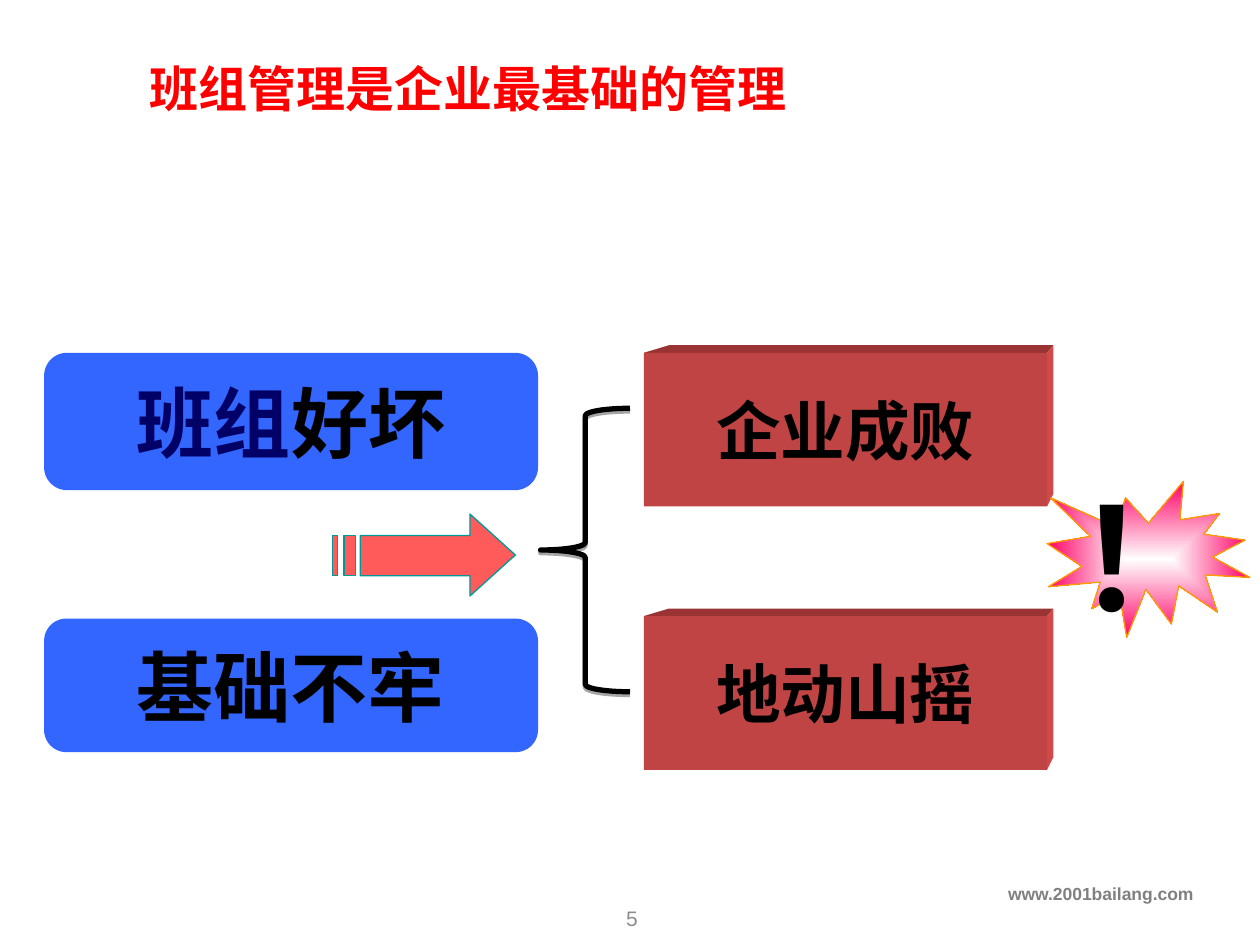
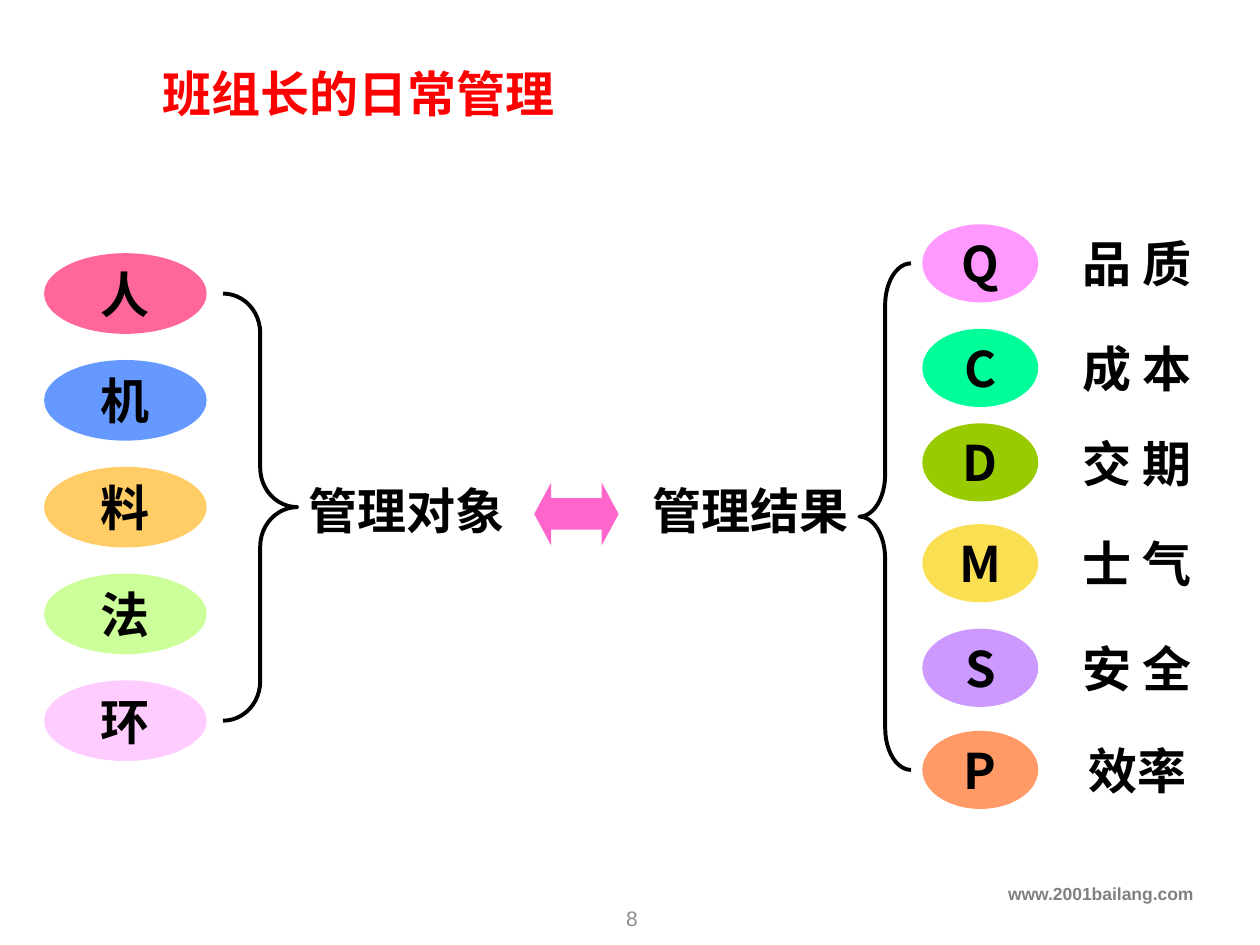
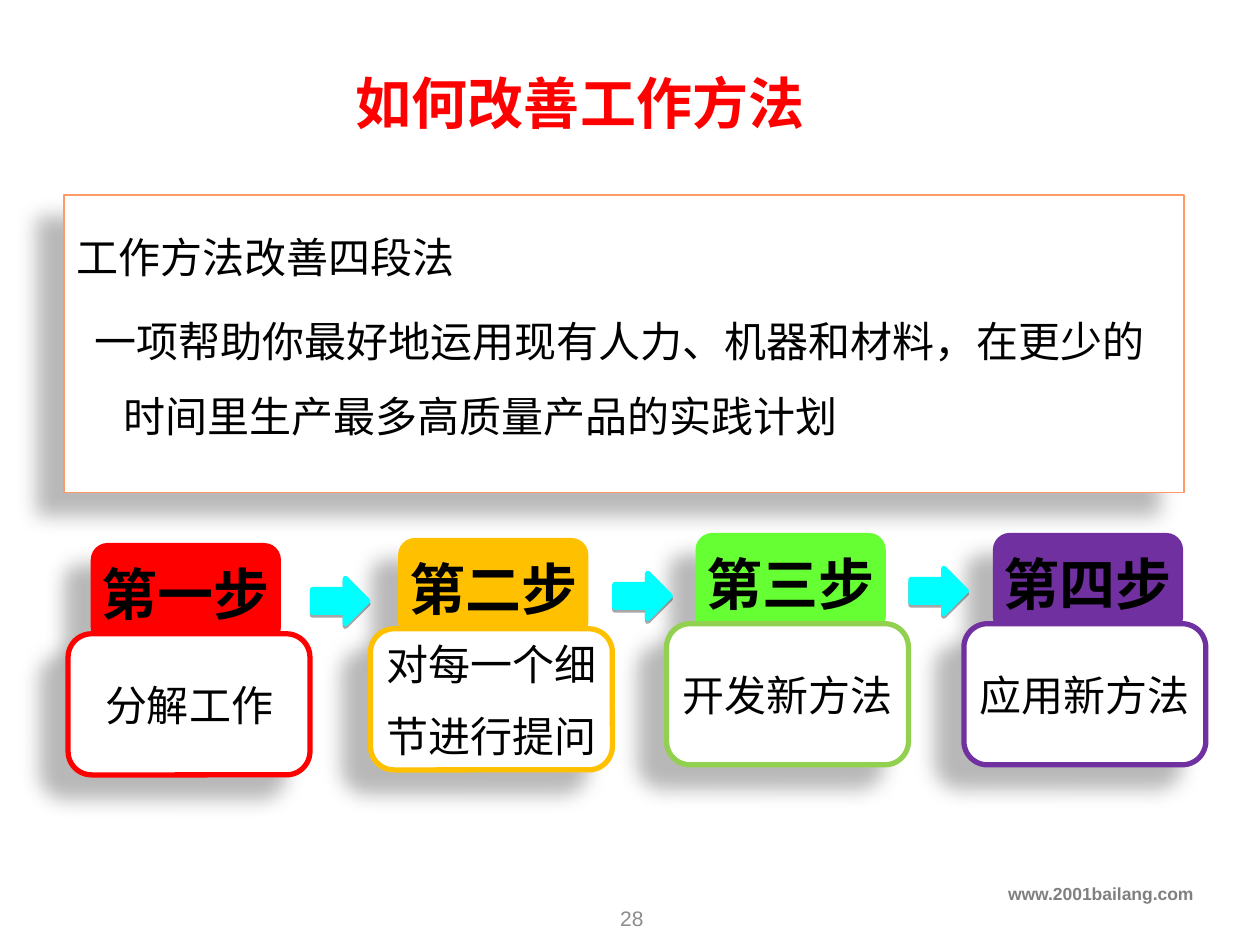
from lxml import etree
from pptx import Presentation
from pptx import util as u
from pptx.dml import color
from pptx.enum import shapes, text
from pptx.oxml import ns

CJK = "Noto Sans CJK SC"
LATIN = "Arial"
RED, BLACK, WHITE = "FF0000", "000000", "FFFFFF"
BLUE, CORAL, CYAN = "3366FF", "FF5B5B", "00FFFF"
SITE = "www.2001bailang.com"
SOFT_SHADOW = dict(alpha=28, blur=11.8, distance=19.7, angle=141)
HARD_SHADOW = dict(alpha=34, blur=0, distance=1.6, angle=90)
LEFT, CENTER, RIGHT = text.PP_ALIGN.LEFT, text.PP_ALIGN.CENTER, text.PP_ALIGN.RIGHT
MIDDLE, TOP = text.MSO_ANCHOR.MIDDLE, text.MSO_ANCHOR.TOP
PRESET = shapes.MSO_SHAPE


def rgb(value):
    return color.RGBColor.from_string(value)


def inches(*values):
    return [u.Inches(value) for value in values]


def add_element(parent, tag, **attributes):
    element = etree.SubElement(parent, ns.qn(tag))
    for name, value in attributes.items():
        element.set(name, str(value))
    return element


def write(shape, paragraphs, size=28, font=CJK, colour=BLACK, bold=True, align=CENTER,
          anchor=MIDDLE, wrap=False, insets=(0.1, 0.05), before=0, spacing=None, indents=()):
    frame = shape.text_frame
    frame.word_wrap = wrap
    frame.auto_size = text.MSO_AUTO_SIZE.NONE
    frame.vertical_anchor = anchor
    frame.margin_left = frame.margin_right = u.Inches(insets[0])
    frame.margin_top = frame.margin_bottom = u.Inches(insets[1])
    if isinstance(paragraphs, str):
        paragraphs = [paragraphs]
    for index, content in enumerate(paragraphs):
        paragraph = frame.add_paragraph() if index else frame.paragraphs[0]
        paragraph.alignment = align
        paragraph.space_before = u.Pt(before if index else 0)
        if spacing:
            paragraph.line_spacing = u.Pt(spacing)
        if indents:
            margin, indent = indents[index]
            properties = paragraph._p.get_or_add_pPr()
            properties.set("marL", str(u.Inches(margin)))
            properties.set("indent", str(u.Inches(indent)))
        pieces = [(content, colour)] if isinstance(content, str) else content
        for words, run_colour in pieces:
            run = paragraph.add_run()
            run.text = words
            run.font.size = u.Pt(size)
            run.font.bold = bold
            run.font.color.rgb = rgb(run_colour)
            run.font.name = font
            add_element(run._r.get_or_add_rPr(), "a:ea", typeface=font)


def paint(shape, fill=None, line=None, width=1, shadow=None):
    if fill:
        shape.fill.solid()
        shape.fill.fore_color.rgb = rgb(fill)
    else:
        shape.fill.background()
    if line:
        shape.line.color.rgb = rgb(line)
        shape.line.width = u.Pt(width)
    else:
        shape.line.fill.background()
    shape.shadow.inherit = False
    if shadow:
        effects = shape._element.spPr.find(ns.qn("a:effectLst"))
        outer = add_element(effects, "a:outerShdw", blurRad=u.Pt(shadow["blur"]),
                            dist=u.Pt(shadow["distance"]), dir=shadow["angle"] * 60000,
                            algn="ctr", rotWithShape=0)
        shade = add_element(outer, "a:srgbClr", val=BLACK)
        add_element(shade, "a:alpha", val=shadow["alpha"] * 1000)


def add_preset(slide, kind, box, adjustments=(), **style):
    shape = slide.shapes.add_shape(kind, *inches(*box))
    for index, value in enumerate(adjustments):
        shape.adjustments[index] = value
    paint(shape, **style)
    return shape


def add_label(slide, box, words, **format_options):
    write(slide.shapes.add_textbox(*inches(*box)), words, **format_options)


def add_outline(slide, box, contours, **style):
    left, top = box[:2]
    points = [[tuple(inches(left + x, top + y)) for x, y in contour] for contour in contours]
    builder = slide.shapes.build_freeform(*points[0][0])
    builder.add_line_segments(points[0][1:], close=True)
    for contour in points[1:]:
        builder.move_to(*contour[0])
        builder.add_line_segments(contour[1:], close=True)
    shape = builder.convert_to_shape()
    paint(shape, **style)


def start_slide(presentation, title, box, number, **title_format):
    slide = presentation.slides.add_slide(presentation.slide_layouts[5])
    heading = slide.shapes.title
    heading.left, heading.top, heading.width, heading.height = inches(*box)
    write(heading, title, colour=RED, wrap=True, **title_format)
    add_label(slide, (0, 6.96, 9.57, 0.35), SITE, size=10, font=LATIN, colour="808080",
              align=RIGHT, anchor=TOP, wrap=True)
    add_label(slide, (3.89, 7.09, 2.25, 0.4), str(number), size=12, font=LATIN,
              colour="8C8C8C", bold=False, wrap=True)
    return slide


def add_block(slide, box, words):
    left, top, width, height = box
    depth, rise, slant = 0.05, 0.06, 0.2
    add_outline(slide, box, [[(0, 0), (slant, -rise), (width + depth, -rise), (width, 0)]],
                fill="9A3434")
    add_outline(slide, box, [[(width, 0), (width + depth, -rise),
                              (width + depth, height - 0.1), (width, height)]], fill="D14A4A")
    front = add_preset(slide, PRESET.RECTANGLE, box, fill="C04444")
    write(front, words, size=36.9)


def add_striped_arrow(slide, box):
    width, height = box[2:]
    upper, lower, neck = 0.17, 0.49, 1.09
    contours = [[(start, upper), (end, upper), (end, lower), (start, lower)]
                for start, end in ((0, 0.04), (0.09, 0.18))]
    contours.append([(neck, 0), (neck, upper), (0.22, upper), (0.22, lower),
                     (neck, lower), (neck, height), (width, height / 2)])
    add_outline(slide, box, contours, fill=CORAL, line="009999", width=0.75)


def add_burst(slide, box):
    burst = add_preset(slide, PRESET.EXPLOSION1, box, line="FF9900", width=0.75)
    burst.fill.gradient()
    for stop, colour in zip(burst.fill.gradient_stops, (WHITE, "FF0066")):
        stop.color.rgb = rgb(colour)
    for position, stop in enumerate(burst.fill.gradient_stops):
        stop.position = position
    gradient = burst._element.spPr.find(ns.qn("a:gradFill"))
    gradient.remove(gradient.find(ns.qn("a:lin")))
    route = etree.Element(ns.qn("a:path"))
    route.set("path", "shape")
    gradient.find(ns.qn("a:gsLst")).addnext(route)
    add_element(route, "a:fillToRect", l=50000, t=50000, r=50000, b=50000)
    write(burst, "！", size=81.2)


def build_foundation(presentation):
    slide = start_slide(presentation, "班组管理是企业最基础的管理", (1.09, 0.44, 7.83, 0.51), 5,
                        align=LEFT)
    causes = [(2.8, 1.09, [("班组", "000066"), ("好坏", BLACK)]),
              (4.91, 1.06, [("基础不牢", BLACK)])]
    for top, height, pieces in causes:
        cause = add_preset(slide, PRESET.ROUNDED_RECTANGLE, (0.35, top, 3.92, height), fill=BLUE)
        write(cause, [pieces], size=44, insets=(0.02, 0.01))
    for top, words in ((4.89, "地动山摇"), (2.8, "企业成败")):
        add_block(slide, (5.11, top, 3.2, 1.22), words)
    add_striped_arrow(slide, (2.64, 4.08, 1.45, 0.65))
    add_burst(slide, (8.31, 3.82, 1.61, 1.24))
    add_preset(slide, PRESET.LEFT_BRACE, (4.29, 3.24, 0.71, 2.25), line=BLACK, width=3,
               shadow=HARD_SHADOW)


def add_objects(slide, box):
    left, top, width, height = box
    oval_height = 0.64
    objects = [("人", "FF6699"), ("机", "6699FF"), ("料", "FFCC66"),
               ("法", "CCFF99"), ("环", "FFCCFF")]
    pitch = (height - oval_height) / (len(objects) - 1)
    for index, (words, fill) in enumerate(objects):
        oval = add_preset(slide, PRESET.OVAL, (left, top + index * pitch, 1.29, oval_height),
                          fill=fill)
        write(oval, words)
    add_preset(slide, PRESET.RIGHT_BRACE,
               (left + width - 0.59, top + oval_height / 2, 0.59, height - oval_height),
               (0.53, 0.5), line=BLACK, width=2.25)


def add_results(slide, box):
    left, top, width, height = box
    results = [(0, "Q", "品 质", "FF99FF"), (0.83, "C", "成 本", "00FF99"),
               (1.58, "D", "交 期", "99CC00"), (2.38, "M", "士 气", "FBDF53"),
               (3.21, "S", "安 全", "CC99FF"), (4.02, "P", "效率", "FF9966")]
    row_height = 0.62
    add_preset(slide, PRESET.LEFT_BRACE,
               (left, top + row_height / 2, 0.41, height - row_height),
               (0.81, 0.5), line=BLACK, width=2.25)
    for offset, letter, meaning, fill in results:
        oval = add_preset(slide, PRESET.OVAL, (left + 0.5, top + offset, 0.92, row_height),
                          fill=fill)
        write(oval, letter)
        add_label(slide, (left + width - 1.25, top + offset, 1.25, row_height), meaning)


def build_daily_management(presentation):
    slide = start_slide(presentation, "班组长的日常管理", (1.19, 0.43, 6.77, 0.62), 8,
                        font=LATIN, align=LEFT)
    add_objects(slide, (0.35, 2.01, 2.01, 4.03))
    for left, words in ((2.35, "管理对象"), (5.08, "管理结果")):
        add_label(slide, (left, 3.76, 1.75, 0.58), words)
    add_preset(slide, PRESET.LEFT_RIGHT_ARROW, (4.24, 3.83, 0.67, 0.5), (0.5, 0.27),
               fill="FF66CC")
    add_results(slide, (6.82, 1.78, 2.83, 4.64))


def add_step(slide, box, head_left, head, details, fill, line):
    left, top, width, height = box
    card_top = top + 0.72
    tab = add_preset(slide, PRESET.ROUNDED_RECTANGLE, (head_left, top, 1.51, 0.8), fill=fill,
                     shadow=SOFT_SHADOW)
    write(tab, head, size=32)
    card = add_preset(slide, PRESET.ROUNDED_RECTANGLE,
                      (left, card_top, width, top + height - card_top),
                      fill=WHITE, line=line, width=3, shadow=SOFT_SHADOW)
    write(card, details, size=24, bold=False, spacing=29, before=12)


def build_method(presentation):
    slide = start_slide(presentation, "如何改善工作方法", (1.22, 0.5, 6.77, 0.62), 28, size=32)
    summary = add_preset(slide, PRESET.RECTANGLE, (0.51, 1.55, 8.89, 2.36), fill=WHITE,
                         line="FF9966", shadow=SOFT_SHADOW)
    write(summary, ["工作方法改善四段法",
                    "一项帮助你最好地运用现有人力、机器和材料，在更少的时间里生产最多高质量产品的实践计划"],
          size=24, bold=False, align=LEFT, anchor=TOP, wrap=True, insets=(0.1, 0.09),
          spacing=43, before=5, indents=[(0.37, -0.37), (0.37, -0.23)])
    steps = [(0.54, 0.72, 4.31, "第一步", ["分解工作"], RED, RED),
             (2.94, 3.16, 4.27, "第二步", ["对每一个细", "节进行提问"], "FFC000", "FFC000"),
             (5.29, 5.52, 4.23, "第三步", ["开发新方法"], "66FF33", "92D050"),
             (7.65, 7.88, 4.23, "第四步", ["应用新方法"], "7030A0", "7030A0")]
    width = 1.92
    for left, head_left, top, *content in steps:
        add_step(slide, (left, top, width, 1.84), head_left, *content)
    for left, _, top, *_ in steps[:-1]:
        add_preset(slide, PRESET.RIGHT_ARROW, (left + width + 0.02, top + 0.28, 0.44, 0.36),
                   fill=CYAN, line=CYAN, width=3, shadow=HARD_SHADOW)


def main():
    presentation = Presentation()
    presentation.slide_width, presentation.slide_height = inches(10, 7.5)
    build_foundation(presentation)
    build_daily_management(presentation)
    build_method(presentation)
    presentation.save("out.pptx")


if __name__ == "__main__":
    main()
